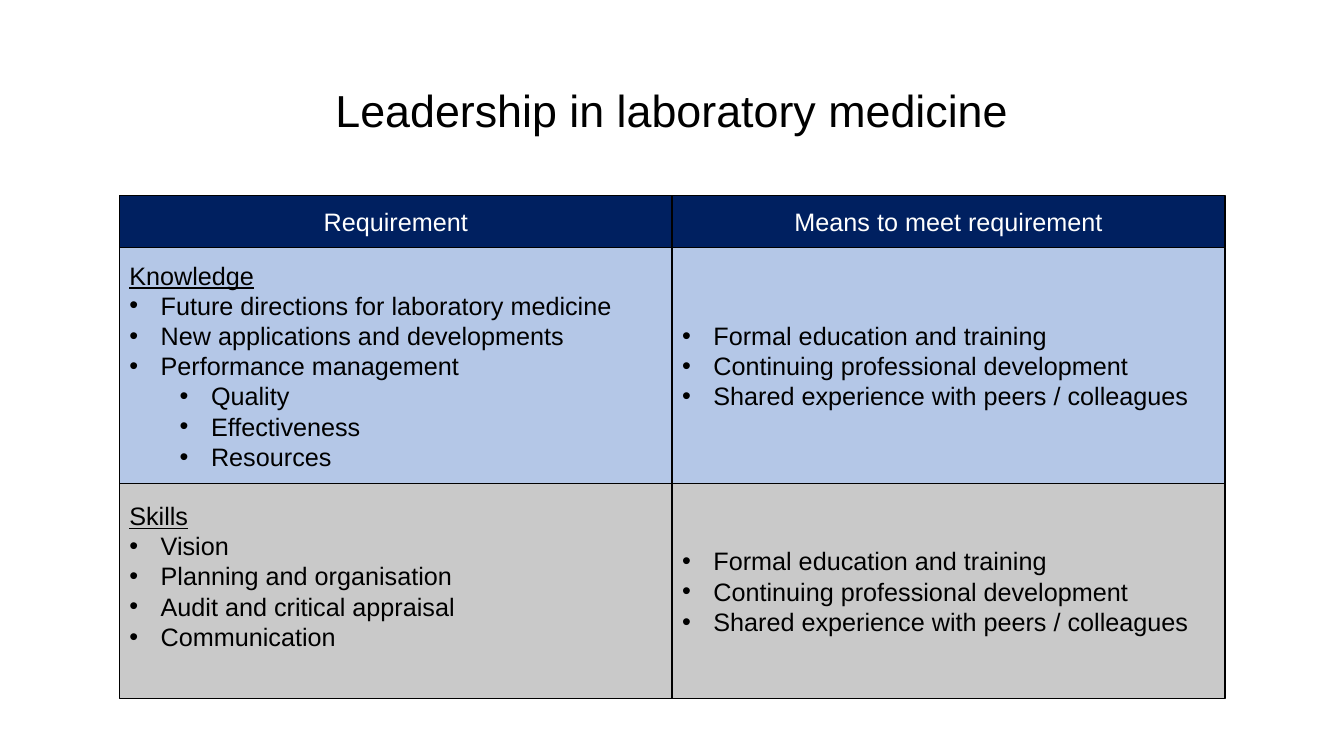
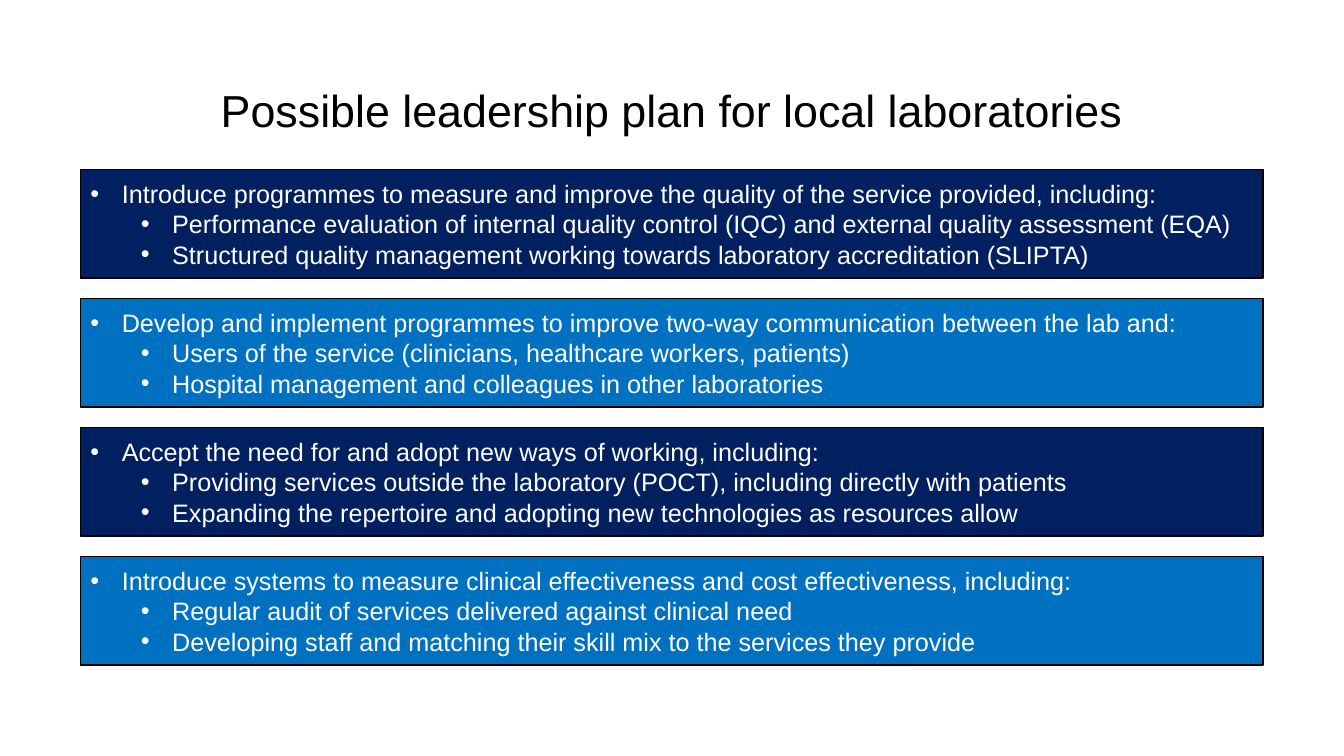
from lxml import etree
from pptx import Presentation
from pptx.dml.color import RGBColor
from pptx.enum import shapes, text
from pptx.oxml import ns
from pptx.util import Cm, Pt

BLACK, WHITE = "000000", "FFFFFF"
NAVY, BLUE, PALE_BLUE, GREY = "002060", "0070C0", "B4C7E7", "C9C9C9"
HEADER, HEADING, BULLET, SUB_BULLET = "header", "heading", "bullet", "sub-bullet"


def rgb(value):
    return RGBColor.from_string(value)


class Deck:
    """Hold the shared style and the current slide, and draw its elements."""

    font = "Arial"
    title_size, body_size = Pt(32), Pt(18)
    border = Pt(1)
    hanging = Cm(0.79)
    indents = {BULLET: Cm(0.79), SUB_BULLET: Cm(2.06)}

    def __init__(self):
        self.prs = Presentation()
        self.prs.slide_width, self.prs.slide_height = Cm(33.87), Cm(19.05)
        self.slide = None

    def new_slide(self, title):
        self.slide = self.prs.slides.add_slide(self.prs.slide_layouts[6])
        box = self.slide.shapes.add_textbox(Cm(2.33), Cm(1.01), Cm(29.21), Cm(3.68))
        frame = box.text_frame
        frame.word_wrap = True
        frame.vertical_anchor = text.MSO_ANCHOR.MIDDLE
        frame.text = title
        paragraph = frame.paragraphs[0]
        paragraph.alignment = text.PP_ALIGN.CENTER
        paragraph.line_spacing = 0.9
        self.style_runs(paragraph, self.title_size, BLACK)

    def style_runs(self, paragraph, size, color, underline=False):
        for run in paragraph.runs:
            run.font.name, run.font.size = self.font, size
            run.font.underline = underline
            run.font.color.rgb = rgb(color)

    def add_bullet(self, paragraph, kind):
        paragraph.level = 1 if kind == SUB_BULLET else 0
        props = paragraph._p.get_or_add_pPr()
        props.set("marL", str(self.indents[kind]))
        props.set("indent", str(-self.hanging))
        etree.SubElement(props, ns.qn("a:buFont"), typeface=self.font)
        etree.SubElement(props, ns.qn("a:buChar"), char="•")

    def write_list(self, frame, lines, color):
        frame.word_wrap = True
        frame.vertical_anchor = text.MSO_ANCHOR.MIDDLE
        frame.text = "\n".join(line for kind, line in lines)
        for paragraph, (kind, line) in zip(frame.paragraphs, lines):
            centred = kind == HEADER
            paragraph.alignment = text.PP_ALIGN.CENTER if centred else text.PP_ALIGN.LEFT
            if kind in self.indents:
                self.add_bullet(paragraph, kind)
            self.style_runs(paragraph, self.body_size, color, kind == HEADING)

    def panel(self, left, top, width, height, fill, lines, color):
        rectangle = self.slide.shapes.add_shape(
            shapes.MSO_SHAPE.RECTANGLE, left, top, width, height)
        rectangle.shadow.inherit = False
        rectangle.fill.solid()
        rectangle.fill.fore_color.rgb = rgb(fill)
        rectangle.line.color.rgb = rgb(BLACK)
        rectangle.line.width = self.border
        self.write_list(rectangle.text_frame, lines, color)
        return rectangle


def build_requirements(deck):
    deck.new_slide("Leadership in laboratory medicine")
    headers = [[(HEADER, "Requirement")], [(HEADER, "Means to meet requirement")]]
    knowledge = [
        (HEADING, "Knowledge"),
        (BULLET, "Future directions for laboratory medicine"),
        (BULLET, "New applications and developments"),
        (BULLET, "Performance management"),
        (SUB_BULLET, "Quality"),
        (SUB_BULLET, "Effectiveness"),
        (SUB_BULLET, "Resources"),
    ]
    skills = [
        (HEADING, "Skills"),
        (BULLET, "Vision"),
        (BULLET, "Planning and organisation"),
        (BULLET, "Audit and critical appraisal"),
        (BULLET, "Communication"),
    ]
    means = [
        (BULLET, "Formal education and training"),
        (BULLET, "Continuing professional development"),
        (BULLET, "Shared experience with peers / colleagues"),
    ]
    rows = [
        (Cm(1.31), NAVY, WHITE, headers),
        (Cm(5.95), PALE_BLUE, BLACK, [knowledge, means]),
        (Cm(5.41), GREY, BLACK, [skills, means]),
    ]
    left, top, width = Cm(3.01), Cm(4.93), Cm(13.93)
    for height, fill, color, contents in rows:
        for column, lines in enumerate(contents):
            panel = deck.panel(left + column * width, top, width, height, fill, lines, color)
            if lines is skills:
                panel.text_frame.margin_bottom = Cm(0.89)
        top += height


def build_plan(deck):
    deck.new_slide("Possible leadership plan for local laboratories")
    actions = [
        ("Introduce programmes to measure and improve the quality of the service provided, including:",
         "Performance evaluation of internal quality control (IQC) and external quality assessment (EQA)",
         "Structured quality management working towards laboratory accreditation (SLIPTA)"),
        ("Develop and implement programmes to improve two-way communication between the lab and:",
         "Users of the service (clinicians, healthcare workers, patients)",
         "Hospital management and colleagues in other laboratories"),
        ("Accept the need for and adopt new ways of working, including:",
         "Providing services outside the laboratory (POCT), including directly with patients",
         "Expanding the repertoire and adopting new technologies as resources allow"),
        ("Introduce systems to measure clinical effectiveness and cost effectiveness, including:",
         "Regular audit of services delivered against clinical need",
         "Developing staff and matching their skill mix to the services they provide"),
    ]
    for index, (action, *steps) in enumerate(actions):
        lines = [(BULLET, action)] + [(SUB_BULLET, step) for step in steps]
        deck.panel(Cm(2.03), Cm(4.27) + index * Cm(3.25), Cm(29.8), Cm(2.74),
                   (NAVY, BLUE)[index % 2], lines, WHITE)


def main():
    deck = Deck()
    build_requirements(deck)
    build_plan(deck)
    deck.prs.save("out.pptx")


if __name__ == "__main__":
    main()
